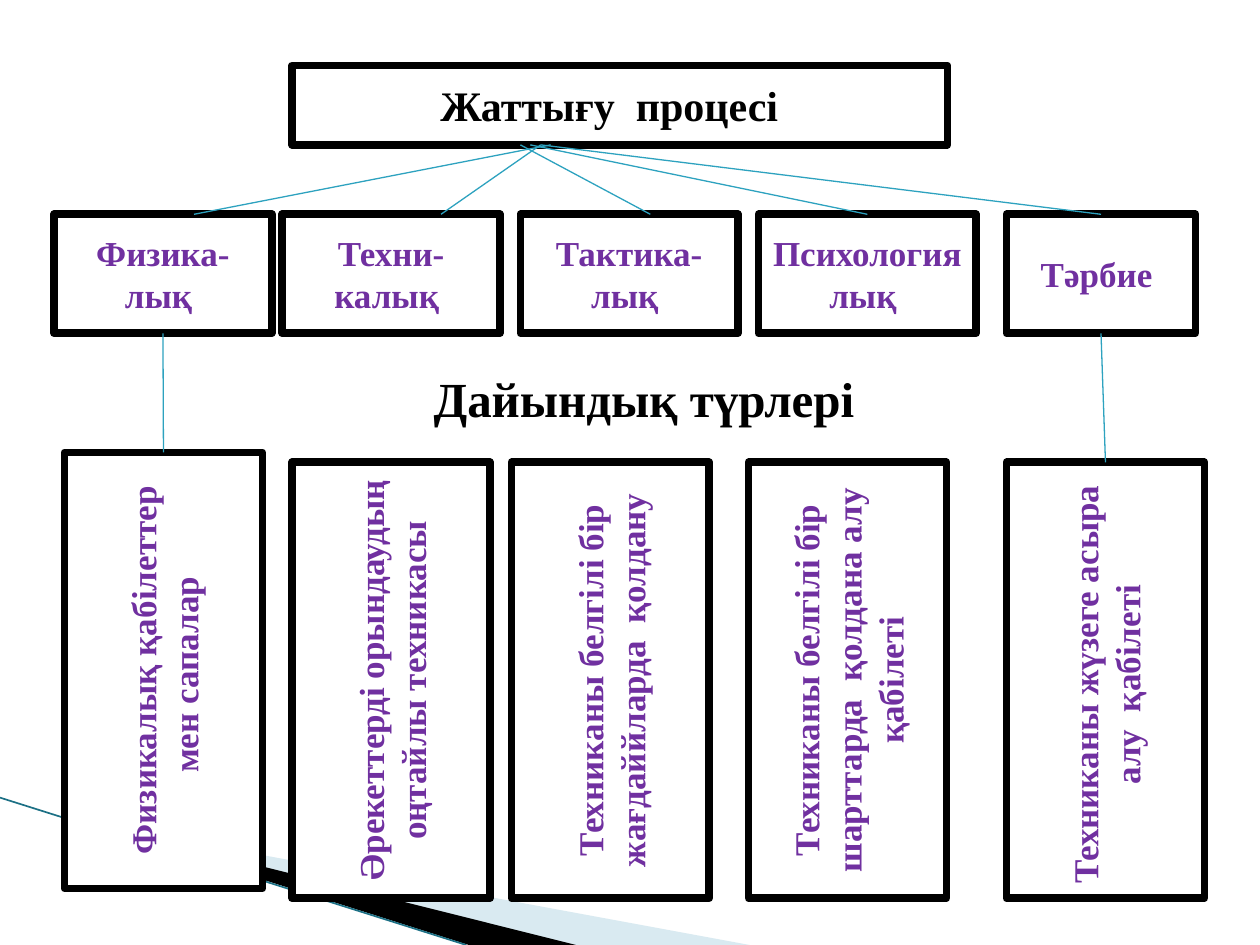
from lxml import etree
from pptx import Presentation
from pptx.dml.color import RGBColor
from pptx.enum.shapes import MSO_CONNECTOR, MSO_SHAPE
from pptx.enum.text import MSO_ANCHOR, MSO_AUTO_SIZE, PP_ALIGN
from pptx.oxml.ns import qn
from pptx.util import Cm, Pt

RECTANGLE = MSO_SHAPE.RECTANGLE
STRAIGHT = MSO_CONNECTOR.STRAIGHT
MIDDLE = MSO_ANCHOR.MIDDLE
CENTER = PP_ALIGN.CENTER
FIT_SHAPE = MSO_AUTO_SIZE.SHAPE_TO_FIT_TEXT

BLACK = RGBColor(0x00, 0x00, 0x00)
WHITE = RGBColor(0xFF, 0xFF, 0xFF)
PURPLE = RGBColor(0x70, 0x30, 0xA0)
TEAL = RGBColor(0x2D, 0xA2, 0xBF)
DARK_TEAL = RGBColor(0x1C, 0x70, 0x85)
PALE_BLUE = RGBColor(0xA0, 0xCB, 0xDC)

TOP, BOTTOM = 0, 2

deck = Presentation()
deck.slide_width, deck.slide_height = Cm(25.4), Cm(19.05)
page = deck.slides.add_slide(deck.slide_layouts[6])
shapes = page.shapes


def write(shape, text, size, color):
    frame = shape.text_frame
    frame.text = text
    frame.vertical_anchor = MIDDLE
    para = frame.paragraphs[0]
    para.alignment = CENTER
    font = para.runs[0].font
    font.name, font.size, font.bold = "Times New Roman", Pt(size), True
    font.color.rgb = color


def add_line(x1, y1, x2, y2, color=TEAL, width=0.75):
    line = shapes.add_connector(STRAIGHT, Cm(x1), Cm(y1), Cm(x2), Cm(y2))
    line.line.color.rgb = color
    line.line.width = Pt(width)
    etree.SubElement(line._element.spPr, qn("a:effectLst"))
    return line


# Corner decoration
wedges = [
    ([(1.4, 16.52), (15.11, 19.05), (11.58, 19.05)], PALE_BLUE, 40),
    ([(1.35, 16.48), (11.61, 19.05), (9.45, 19.05)], BLACK, 100),
]
for points, color, opacity in wedges:
    corners = [(Cm(x), Cm(y)) for x, y in points]
    builder = shapes.build_freeform(*corners[0])
    builder.add_line_segments(corners[1:], close=True)
    wedge = builder.convert_to_shape()
    wedge.shadow.inherit = False
    wedge.line.fill.background()
    wedge.fill.solid()
    wedge.fill.fore_color.rgb = color
    if opacity < 100:
        color_element = wedge._element.spPr.find(qn("a:solidFill"))[0]
        etree.SubElement(color_element, qn("a:alpha"), val=str(opacity * 1000))
add_line(0, 16.08, 9.4, 19.05, DARK_TEAL, 0.95)

# Boxes: left, top, width, height, text, size, colour, vertical
ROW_TOP, ROW_HEIGHT = 4.32, 2.4
kinds = [
    (1.09, 4.39, "Физика-лық "),
    (5.69, 4.39, "Техни-калық "),
    (10.49, 4.39, "Тактика-лық "),
    (15.29, 4.39, "Психологиялық "),
    (20.29, 3.81, "Тәрбие "),
]
details = [
    (1.3, 9.12, "Физикалық қабілеттер мен сапалар "),
    (5.89, 9.32, "Әрекеттерді орындаудың оңтайлы техникасы"),
    (10.31, 9.32, "Техниканы белгілі бір жағдаййларда  қолдану"),
    (15.09, 9.32, "Техниканы белгілі бір шарттарда  қолдана алу қабілеті"),
    (20.29, 9.32, "Техниканы жүзеге асыра  алу  қабілеті "),
]
specs = [(5.89, 1.32, 13.21, 1.6, "Жаттығу  процесі  ", 24, BLACK, False)]
specs += [(left, ROW_TOP, width, ROW_HEIGHT, text, 20, PURPLE, False)
          for left, width, text in kinds]
specs += [(left, top, 3.99, 8.79, text, 20, PURPLE, True)
          for left, top, text in details]

boxes = []
for left, top, width, height, text, size, color, vertical in specs:
    box = shapes.add_shape(RECTANGLE, Cm(left), Cm(top), Cm(width), Cm(height))
    box.shadow.inherit = False
    box.fill.solid()
    box.fill.fore_color.rgb = WHITE
    box.line.color.rgb = BLACK
    box.line.width = Pt(4.33)
    write(box, text, size, color)
    if vertical:
        box.text_frame._txBody.bodyPr.set("vert", "vert270")
    boxes.append(box)
kind_boxes, detail_boxes = boxes[1:6], boxes[6:]

# Lines from the first and last kind down to their details
for index in (0, -1):
    line = add_line(0, 0, 1, 1)
    line.begin_connect(kind_boxes[index], BOTTOM)
    line.end_connect(detail_boxes[index], TOP)

# Lines fanning out from the process box
fan = [(11.1, 3.91), (10.9, 8.89), (10.49, 13.11), (10.69, 17.49), (10.9, 22.2)]
for index, (start, end) in enumerate(fan):
    line = add_line(start, 2.92, end, ROW_TOP)
    if index >= 3:
        line.end_connect(kind_boxes[index], TOP)

# Caption between the rows
caption = shapes.add_textbox(Cm(8.43), Cm(7.29), Cm(9.35), Cm(1.45))
write(caption, "Дайындық түрлері ", 28, BLACK)
caption.text_frame.word_wrap = False
caption.text_frame.auto_size = FIT_SHAPE

deck.save("out.pptx")
